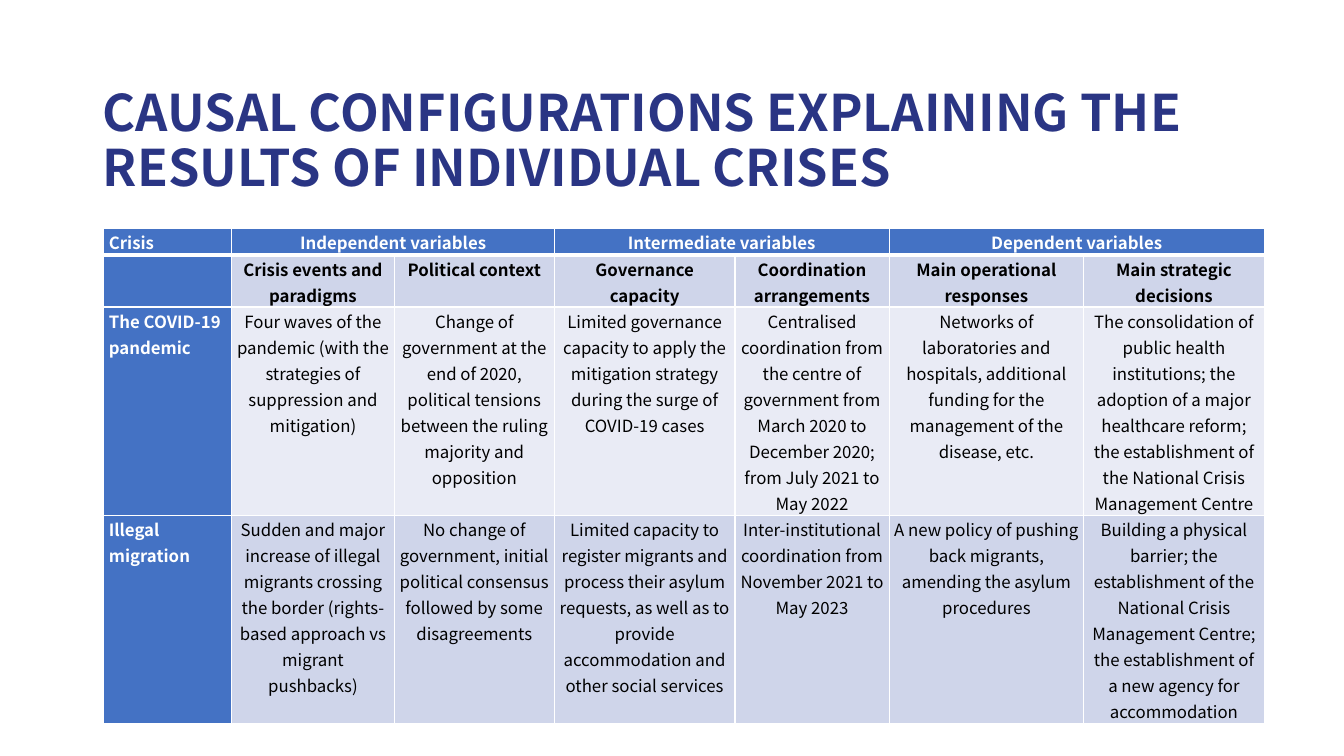
from dataclasses import dataclass

from lxml import etree
from pptx import Presentation
from pptx.dml.color import RGBColor
from pptx.enum import text as t
from pptx.oxml import ns
from pptx.table import Table, _Cell
from pptx.util import Inches, Pt

FONT = "Noto Sans CJK KR"
NAVY = RGBColor(0x2A, 0x35, 0x84)
BLUE = RGBColor(0x44, 0x72, 0xC4)
MID = RGBColor(0xCF, 0xD5, 0xEA)
PALE = RGBColor(0xE9, 0xEB, 0xF5)
WHITE = RGBColor(0xFF, 0xFF, 0xFF)
BLACK = RGBColor(0, 0, 0)

WIDTHS = (1.27, 1.61, 1.59, 1.79, 1.53, 1.93, 1.79)


@dataclass
class Row:
    height: float
    fill: RGBColor
    bold: bool
    texts: tuple[str, ...]


ROWS = (
    Row(0.23, BLUE, True, (
        "Crisis",
        "Independent variables", "",
        "Intermediate variables", "",
        "Dependent variables", "")),
    Row(0.47, MID, True, (
        "",
        "Crisis events and paradigms",
        "Political context",
        "Governance capacity",
        "Coordination arrangements",
        "Main operational responses",
        "Main strategic decisions")),
    Row(1.8, PALE, False, (
        "The COVID-19 pandemic",
        "Four waves of the pandemic (with the strategies of suppression and mitigation)",
        "Change of government at the end of 2020, political tensions between the ruling "
        "majority and opposition",
        "Limited governance capacity to apply the mitigation strategy during the surge of "
        "COVID-19 cases",
        "Centralised coordination from the centre of government from March 2020 to "
        "December 2020; from July 2021 to May 2022",
        "Networks of laboratories and hospitals, additional funding for the management of "
        "the disease, etc.",
        "The consolidation of public health institutions; the adoption of a major "
        "healthcare reform; the establishment of the National Crisis Management Centre")),
    Row(1.65, MID, False, (
        "Illegal migration",
        "Sudden and major increase of illegal migrants crossing the border (rights-based "
        "approach vs migrant pushbacks)",
        "No change of government, initial political consensus followed by some disagreements",
        "Limited capacity to register migrants and process their asylum requests, as well "
        "as to provide accommodation and other social services",
        "Inter-institutional coordination from November 2021 to May 2023",
        "A new policy of pushing back migrants, amending the asylum procedures",
        "Building a physical barrier; the establishment of the National Crisis Management "
        "Centre; the establishment of a new agency for accommodation")),
)


def style(par: t, size: float, color: RGBColor, bold: bool) -> None:
    for font in [par.font] + [run.font for run in par.runs]:
        font.name = FONT
        font.size = Pt(size)
        font.bold = bold
        font.color.rgb = color


def rule(cell: _Cell, side: str, width: float) -> None:
    """Draw a white border on one side (L, R, T or B)."""
    props = cell._tc.get_or_add_tcPr()
    line = etree.SubElement(props, ns.qn(f"a:ln{side}"), w=str(Pt(width)))
    fill = etree.SubElement(line, ns.qn("a:solidFill"))
    etree.SubElement(fill, ns.qn("a:srgbClr"), val=str(WHITE))


def fill_cell(cell: _Cell, row: Row, r: int, c: int) -> None:
    for side in "LRTB":
        heavy = (r, side) in ((0, "B"), (1, "T"))
        rule(cell, side, 3 if heavy else 1)
    head = r == 0 or c == 0
    cell.fill.solid()
    cell.fill.fore_color.rgb = BLUE if head else row.fill
    cell.margin_left = cell.margin_right = Inches(0.05)
    cell.margin_top = cell.margin_bottom = 0
    cell.text_frame.text = row.texts[c]
    par = cell.text_frame.paragraphs[0]
    par.alignment = t.PP_ALIGN.CENTER if c else t.PP_ALIGN.LEFT
    par.line_spacing = 1.07
    par.space_after = Pt(8)
    style(par, 12, WHITE if head else BLACK, row.bold or c == 0)


def fill_table(table: Table) -> None:
    for col, width in zip(table.columns, WIDTHS):
        col.width = Inches(width)
    for r, row in enumerate(ROWS):
        table.rows[r].height = Inches(row.height)
        for c in range(len(WIDTHS)):
            fill_cell(table.cell(r, c), row, r, c)
    for c in range(1, len(WIDTHS), 2):
        table.cell(0, c).merge(table.cell(0, c + 1))


def main() -> None:
    deck = Presentation()
    deck.slide_width, deck.slide_height = Inches(13.33), Inches(7.5)
    slide = deck.slides.add_slide(deck.slide_layouts[5])

    title = slide.shapes.title
    title.left, title.top = Inches(0.92), Inches(0.94)
    title.width, title.height = Inches(12.06), Inches(0.95)
    frame = title.text_frame
    frame.text = "CAUSAL CONFIGURATIONS EXPLAINING THE RESULTS OF INDIVIDUAL CRISES"
    frame.word_wrap = True
    frame.auto_size = t.MSO_AUTO_SIZE.NONE
    frame.vertical_anchor = t.MSO_ANCHOR.MIDDLE
    par = frame.paragraphs[0]
    par.alignment = t.PP_ALIGN.LEFT
    par.line_spacing = 0.9
    style(par, 36, NAVY, True)

    grid = slide.shapes.add_table(
        len(ROWS), len(WIDTHS), Inches(1.03), Inches(2.27), Inches(11.5), Inches(4.15))
    fill_table(grid.table)
    deck.save("out.pptx")


if __name__ == "__main__":
    main()
